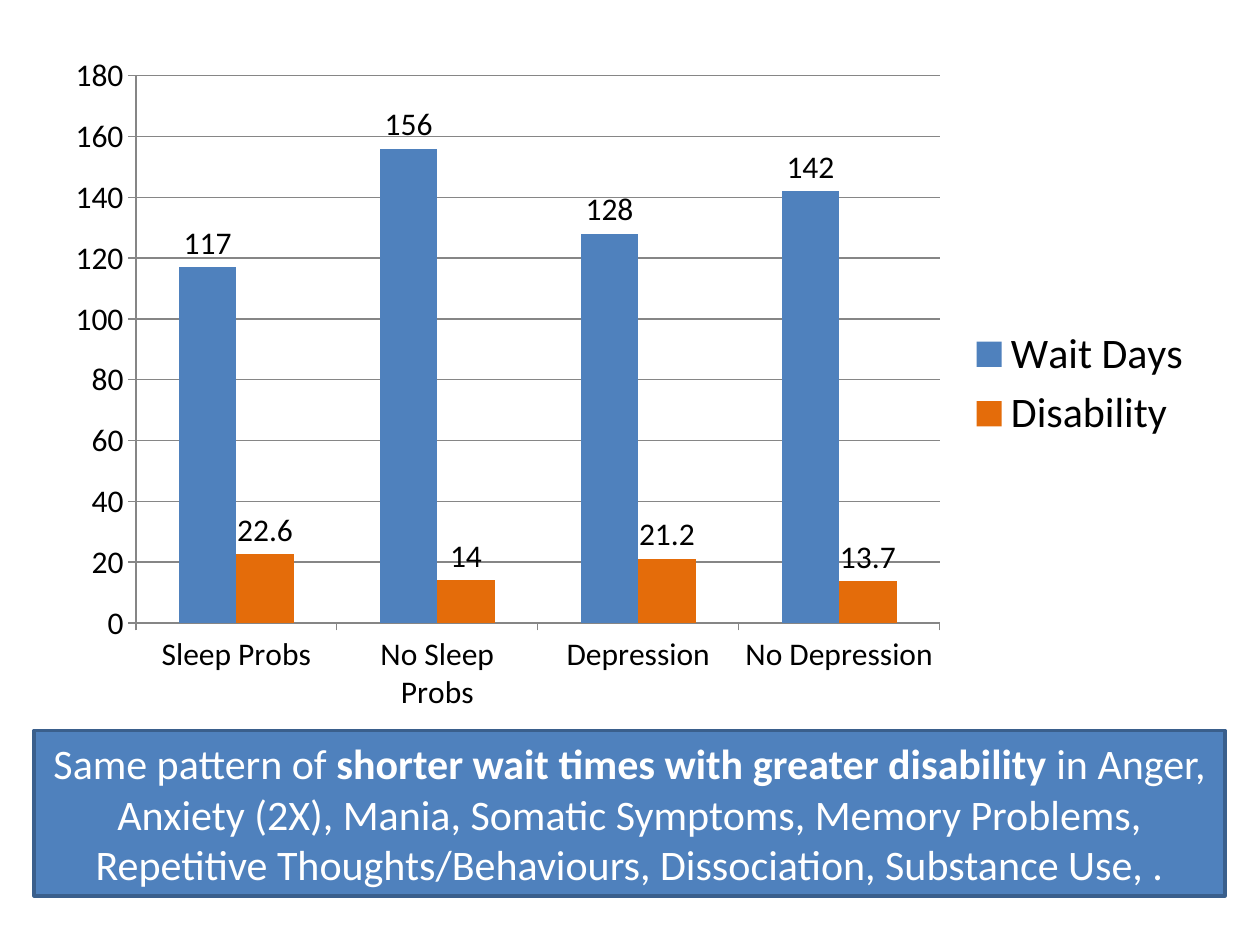
from dataclasses import dataclass

from pptx import Presentation
from pptx import util as u
from pptx.chart import data as chart_data
from pptx.dml import color
from pptx.enum import chart as chart_enum
from pptx.enum import shapes, text


@dataclass(frozen=True)
class Theme:
    font: str = "Calibri"
    dark: str = "000000"
    light: str = "FFFFFF"
    blue: str = "4F81BD"
    orange: str = "E46C0A"
    border: str = "3A5F8C"
    grid: str = "868686"
    chart_size: int = 18
    large_size: int = 24


class SlideBuilder:
    def __init__(self, slide, theme):
        self.slide = slide
        self.theme = theme

    def set_font(self, font, size, rgb):
        font.name = self.theme.font
        font.size = u.Pt(size)
        font.color.rgb = color.RGBColor.from_string(rgb)

    def set_line(self, line, rgb, width):
        line.color.rgb = color.RGBColor.from_string(rgb)
        line.width = u.Pt(width)

    def set_fill(self, fill, rgb):
        fill.solid()
        fill.fore_color.rgb = color.RGBColor.from_string(rgb)

    def add_column_chart(self, box, categories, series_list):
        theme = self.theme
        data = chart_data.CategoryChartData()
        data.categories = categories
        for name, values, _ in series_list:
            data.add_series(name, values)
        chart = self.slide.shapes.add_chart(
            chart_enum.XL_CHART_TYPE.COLUMN_CLUSTERED, *map(u.Pt, box), data
        ).chart
        self.set_font(chart.font, theme.chart_size, theme.dark)
        chart.has_title = False
        chart.has_legend = True
        chart.legend.position = chart_enum.XL_LEGEND_POSITION.RIGHT
        chart.legend.include_in_layout = False
        self.set_font(chart.legend.font, theme.large_size, theme.dark)

        for axis in (chart.category_axis, chart.value_axis):
            axis.major_tick_mark = chart_enum.XL_TICK_MARK.OUTSIDE
            axis.minor_tick_mark = chart_enum.XL_TICK_MARK.NONE
            self.set_line(axis.format.line, theme.grid, 0.75)
            self.set_font(axis.tick_labels.font, theme.chart_size, theme.dark)
        chart.value_axis.has_major_gridlines = True
        self.set_line(chart.value_axis.major_gridlines.format.line, theme.grid, 0.75)

        plot = chart.plots[0]
        plot.gap_width = 150
        plot.vary_by_categories = False
        for series, (_, _, rgb) in zip(plot.series, series_list):
            self.set_fill(series.format.fill, rgb)
            series.data_labels.show_value = True
            series.data_labels.position = chart_enum.XL_LABEL_POSITION.OUTSIDE_END
            self.set_font(series.data_labels.font, theme.chart_size, theme.dark)

    def add_banner(self, box, runs):
        theme = self.theme
        shape = self.slide.shapes.add_shape(
            shapes.MSO_SHAPE.RECTANGLE, *map(u.Pt, box)
        )
        shape.shadow.inherit = False
        self.set_fill(shape.fill, theme.blue)
        self.set_line(shape.line, theme.border, 2)
        frame = shape.text_frame
        frame.word_wrap = True
        frame.auto_size = text.MSO_AUTO_SIZE.SHAPE_TO_FIT_TEXT
        frame.vertical_anchor = text.MSO_ANCHOR.MIDDLE
        paragraph = frame.paragraphs[0]
        paragraph.alignment = text.PP_ALIGN.CENTER
        self.set_font(paragraph.font, theme.large_size, theme.light)
        for words, bold in runs:
            run = paragraph.add_run()
            run.text = words
            run.font.bold = bold


def main():
    theme = Theme()
    presentation = Presentation()
    presentation.slide_width = u.Pt(720)
    presentation.slide_height = u.Pt(540)
    slide = presentation.slides.add_slide(presentation.slide_layouts[6])
    builder = SlideBuilder(slide, theme)
    builder.add_column_chart(
        (30, 24.5, 660, 390),
        ["Sleep Probs", "No Sleep Probs", "Depression", "No Depression"],
        [
            ("Wait Days", (117, 156, 128, 142), theme.blue),
            ("Disability", (22.6, 14, 21.2, 13.7), theme.orange),
        ],
    )
    builder.add_banner(
        (19.5, 417.5, 680.5, 94.5),
        [
            ("Same pattern of ", False),
            ("shorter wait times with greater disability ", True),
            (
                "in Anger, Anxiety (2X), Mania, Somatic Symptoms, Memory Problems, "
                "Repetitive Thoughts/Behaviours, Dissociation, Substance Use, .",
                False,
            ),
        ],
    )
    presentation.save("out.pptx")


if __name__ == "__main__":
    main()
